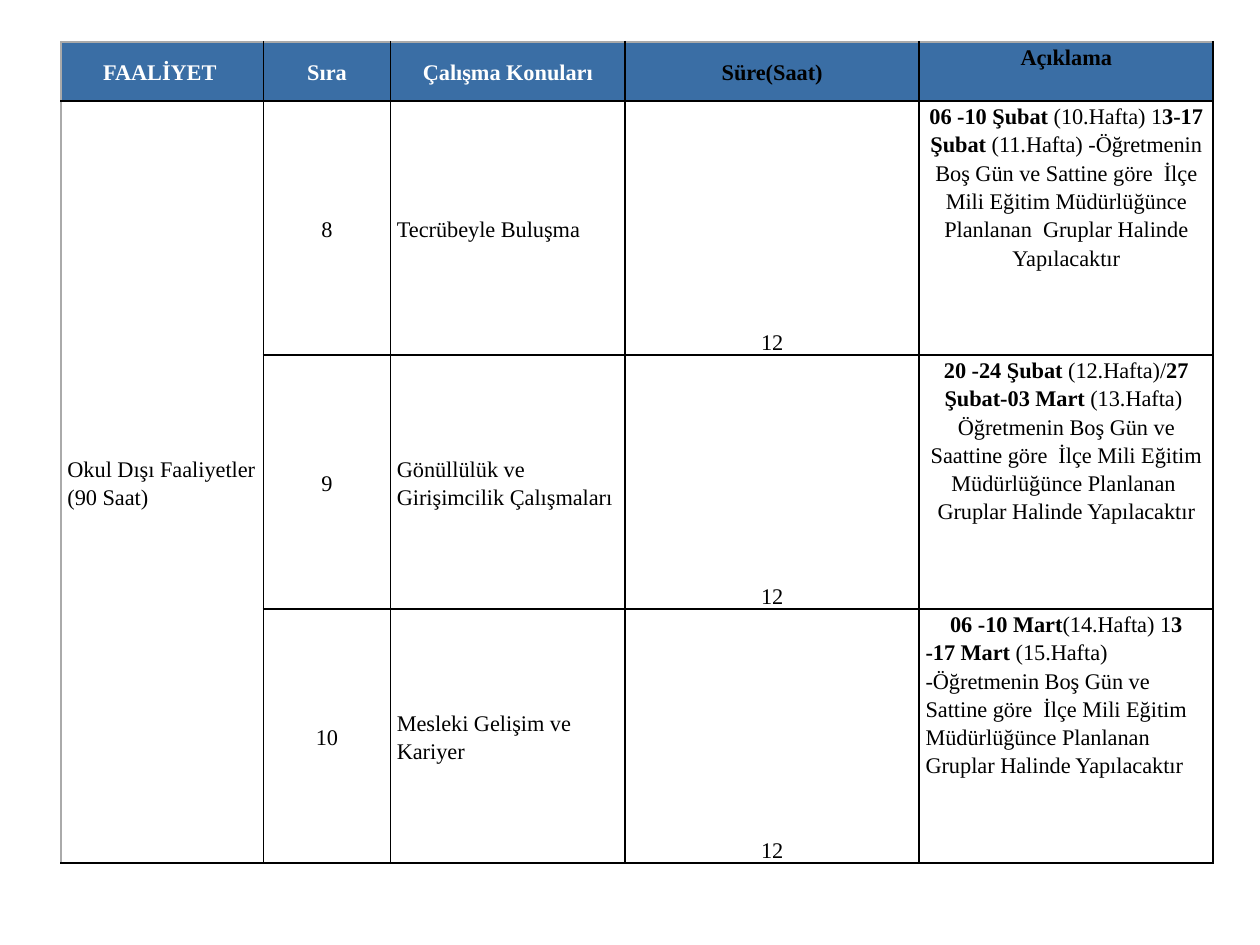
from pptx import Presentation
from pptx.dml.color import RGBColor
from pptx.enum.text import MSO_ANCHOR as Anchor, PP_ALIGN as Align
from pptx.oxml.ns import qn
from pptx.util import Inches, Pt
from lxml.etree import SubElement

BLACK = RGBColor(0x00, 0x00, 0x00)
WHITE = RGBColor(0xFF, 0xFF, 0xFF)
BLUE = RGBColor(0x3A, 0x6E, 0xA5)
GRAY = RGBColor(0xAA, 0xAA, 0xAA)

COLUMN_WIDTHS = [1.26, 0.79, 1.46, 1.83, 1.83]
ROW_HEIGHTS = [0.37, 1.58, 1.58, 1.58]

# Header: text, font colour, anchor
HEADERS = [
    ("FAALİYET ", WHITE, Anchor.MIDDLE),
    ("Sıra", WHITE, Anchor.MIDDLE),
    ("Çalışma Konuları", WHITE, Anchor.MIDDLE),
    ("Süre(Saat)", BLACK, Anchor.MIDDLE),
    ("Açıklama", BLACK, Anchor.TOP),
]
ACTIVITY = ["Okul Dışı Faaliyetler", "(90 Saat)"]

# Body: number, topic, hours, note paragraphs (text between asterisks is bold)
TOPICS = [
    ("8", "Tecrübeyle Buluşma", "12", [
        "*06 -10 Şubat *(10.Hafta) 1*3-17 Şubat *(11.Hafta) -Öğretmenin Boş Gün ve "
        "Sattine göre  İlçe Mili Eğitim Müdürlüğünce Planlanan  Gruplar Halinde "
        "Yapılacaktır"]),
    ("9", "Gönüllülük ve Girişimcilik Çalışmaları", "12", [
        "*20 -24 Şubat *(12.Hafta)/*27 Şubat-03 Mart *(13.Hafta) ",
        "Öğretmenin Boş Gün ve Saattine göre  İlçe Mili Eğitim Müdürlüğünce "
        "Planlanan  Gruplar Halinde Yapılacaktır"]),
    ("10", "Mesleki Gelişim ve Kariyer", "12", [
        "*06 -10 Mart*(14.Hafta) 1*3*",
        "*-17 Mart *(15.Hafta) -Öğretmenin Boş Gün ve Sattine göre  İlçe Mili Eğitim "
        "Müdürlüğünce Planlanan  Gruplar Halinde Yapılacaktır"]),
]


def set_borders(cell, left, top):
    properties = cell._tc.get_or_add_tcPr()
    sides = [("a:lnL", left), ("a:lnR", BLACK), ("a:lnT", top), ("a:lnB", BLACK)]
    for tag, color in sides:
        line = SubElement(properties, qn(tag), w=str(Pt(1)))
        fill = SubElement(line, qn("a:solidFill"))
        SubElement(fill, qn("a:srgbClr"), val=str(color))


def style_cell(cell, row, column):
    # Borders come before the fill in the cell properties
    set_borders(cell, GRAY if column == 0 else BLACK, GRAY if row == 0 else BLACK)
    if row > 0 and column == 0:
        cell.fill.background()
    else:
        cell.fill.solid()
        cell.fill.fore_color.rgb = BLUE if row == 0 else WHITE
    cell.margin_left = cell.margin_right = Inches(0.04)
    cell.margin_top = cell.margin_bottom = 0


def write_cell(cell, lines, alignments, anchor=Anchor.MIDDLE, color=BLACK):
    cell.vertical_anchor = anchor
    text_frame = cell.text_frame
    for index, (line, alignment) in enumerate(zip(lines, alignments)):
        paragraph = text_frame.add_paragraph() if index else text_frame.paragraphs[0]
        paragraph.alignment = alignment
        paragraph.line_spacing = 1.15
        for part_number, part in enumerate(line.split("*")):
            if not part:
                continue
            run = paragraph.add_run()
            run.text = part
            run.font.name = "Times New Roman"
            run.font.size = Pt(10)
            run.font.bold = part_number % 2 == 1
            run.font.color.rgb = color


def add_plan_table(slide):
    frame = slide.shapes.add_table(
        len(ROW_HEIGHTS), len(COLUMN_WIDTHS), Inches(0.38), Inches(0.26),
        Inches(sum(COLUMN_WIDTHS)), Inches(sum(ROW_HEIGHTS)))
    table = frame.table
    table.first_row = table.horz_banding = False
    for column, width in zip(table.columns, COLUMN_WIDTHS):
        column.width = Inches(width)
    for row, height in zip(table.rows, ROW_HEIGHTS):
        row.height = Inches(height)
    for row in range(len(ROW_HEIGHTS)):
        for column in range(len(COLUMN_WIDTHS)):
            style_cell(table.cell(row, column), row, column)
    table.cell(1, 0).merge(table.cell(len(TOPICS), 0))
    return table


def main():
    presentation = Presentation()
    presentation.slide_width = Inches(7.84)
    presentation.slide_height = Inches(5.88)
    slide = presentation.slides.add_slide(presentation.slide_layouts[6])
    table = add_plan_table(slide)

    # Header row
    for column, (title, color, anchor) in enumerate(HEADERS):
        write_cell(table.cell(0, column), [f"*{title}*"], [Align.CENTER], anchor, color)

    # Activity spanning all topics
    write_cell(table.cell(1, 0), ACTIVITY, [Align.LEFT, Align.LEFT])

    # Topic rows; the last note continues left-aligned
    for row, (number, topic, hours, notes) in enumerate(TOPICS, start=1):
        write_cell(table.cell(row, 1), [number], [Align.CENTER])
        write_cell(table.cell(row, 2), [topic], [Align.LEFT])
        write_cell(table.cell(row, 3), [hours], [Align.CENTER], Anchor.BOTTOM)
        second = Align.LEFT if row == len(TOPICS) else Align.CENTER
        write_cell(table.cell(row, 4), notes, [Align.CENTER, second], Anchor.TOP)

    presentation.save("out.pptx")


if __name__ == "__main__":
    main()
